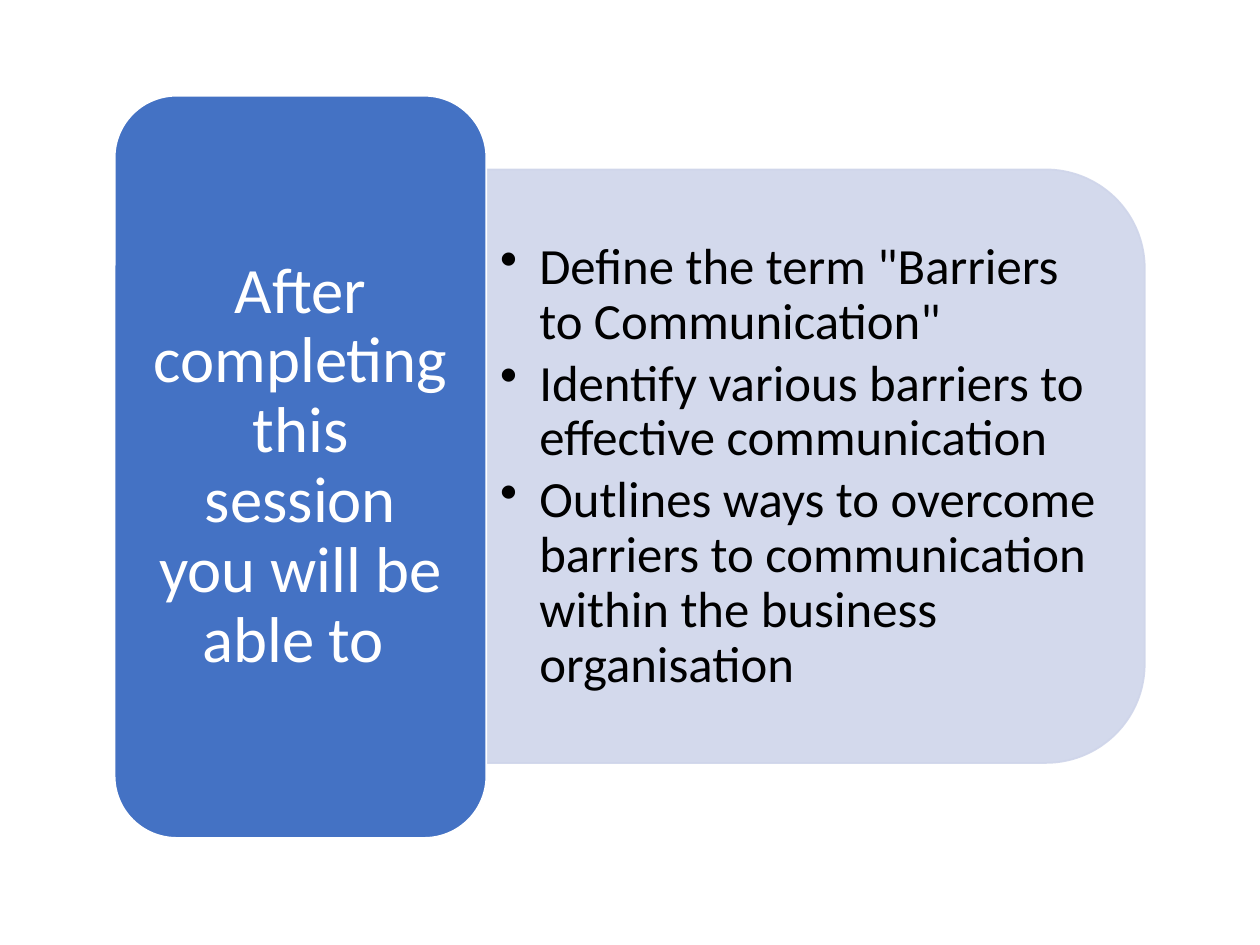
from dataclasses import dataclass

import pptx
import pptx.dml.color
import pptx.enum.shapes
import pptx.enum.text
import pptx.oxml
import pptx.oxml.ns
import pptx.util
from pptx.dml.color import RGBColor
from pptx.util import Inches

WHITE = RGBColor(0xFF, 0xFF, 0xFF)
BLACK = RGBColor(0x00, 0x00, 0x00)
BLUE = RGBColor(0x44, 0x72, 0xC4)
PALE_BLUE = RGBColor(0xCF, 0xD5, 0xEA)

MSO_SHAPE = pptx.enum.shapes.MSO_SHAPE
PP_ALIGN = pptx.enum.text.PP_ALIGN


@dataclass
class Panel:
    kind: MSO_SHAPE
    left: float
    top: float
    width: float
    height: float
    fill: RGBColor
    line: RGBColor
    rotation: float = 0
    opacity: int = 100


@dataclass
class TextStyle:
    size: float
    color: RGBColor
    align: PP_ALIGN
    space_after: float
    inset_x: float
    inset_y: float
    bullet_indent: float = 0


PANELS = [
    Panel(MSO_SHAPE.ROUND_2_SAME_RECTANGLE, 4.11, 1.08, 4.71, 5.24,
          PALE_BLUE, PALE_BLUE, 90, 90),
    Panel(MSO_SHAPE.ROUNDED_RECTANGLE, 0.91, 0.76, 2.95, 5.89, BLUE, WHITE),
]
LEAD_STYLE = TextStyle(37, WHITE, PP_ALIGN.CENTER, 13, 0.15, 0.08)
GOAL_STYLE = TextStyle(29, BLACK, PP_ALIGN.LEFT, 4, 0.12, 0.06, 0.31)

LEAD = "After completing this session you will be able to "
GOALS = [
    'Define the term "Barriers to Communication"',
    "Identify various barriers to effective communication",
    "Outlines ways to overcome barriers to communication within the business organisation",
]


def set_opacity(fill, percent: int) -> None:
    color = fill._xPr.find(".//" + pptx.oxml.ns.qn("a:srgbClr"))
    color.append(pptx.oxml.parse_xml(
        f'<a:alpha {pptx.oxml.ns.nsdecls("a")} val="{percent * 1000}"/>'))


def add_panel(s, panel: Panel):
    sp = s.shapes.add_shape(panel.kind, Inches(panel.left), Inches(panel.top),
                            Inches(panel.width), Inches(panel.height))
    sp.rotation = panel.rotation
    sp.shadow.inherit = False
    sp.line.width = pptx.util.Pt(1)
    for fill, color in ((sp.fill, panel.fill), (sp.line.fill, panel.line)):
        fill.solid()
        fill.fore_color.rgb = color
        if panel.opacity < 100:
            set_opacity(fill, panel.opacity)
    return sp


def add_bullet(p, indent: float) -> None:
    pPr = p._p.get_or_add_pPr()
    pPr.set("marL", str(Inches(indent)))
    pPr.set("indent", str(-Inches(indent)))
    pPr.append(pptx.oxml.parse_xml(
        f'<a:buChar {pptx.oxml.ns.nsdecls("a")} char="•"/>'))


def write_text(tf, lines: list[str], style: TextStyle) -> None:
    tf.word_wrap = True
    tf.vertical_anchor = pptx.enum.text.MSO_ANCHOR.MIDDLE
    tf.margin_left = tf.margin_right = Inches(style.inset_x)
    tf.margin_top = tf.margin_bottom = Inches(style.inset_y)
    for i, line in enumerate(lines):
        p = tf.add_paragraph() if i else tf.paragraphs[0]
        p.alignment = style.align
        p.line_spacing = 0.9
        p.space_after = pptx.util.Pt(style.space_after)
        if style.bullet_indent:
            add_bullet(p, style.bullet_indent)
        r = p.add_run()
        r.text = line
        r.font.name = "Calibri"
        r.font.size = pptx.util.Pt(style.size)
        r.font.color.rgb = style.color


def main() -> None:
    prs = pptx.Presentation()
    prs.slide_width, prs.slide_height = Inches(10), Inches(7.5)
    s = prs.slides.add_slide(prs.slide_layouts[6])
    goal_panel, lead_panel = [add_panel(s, panel) for panel in PANELS]
    goal_box = s.shapes.add_textbox(Inches(3.85), Inches(1.58), Inches(5.01), Inches(4.25))
    write_text(goal_box.text_frame, GOALS, GOAL_STYLE)
    write_text(lead_panel.text_frame, [LEAD], LEAD_STYLE)
    prs.save("out.pptx")


if __name__ == "__main__":
    main()
